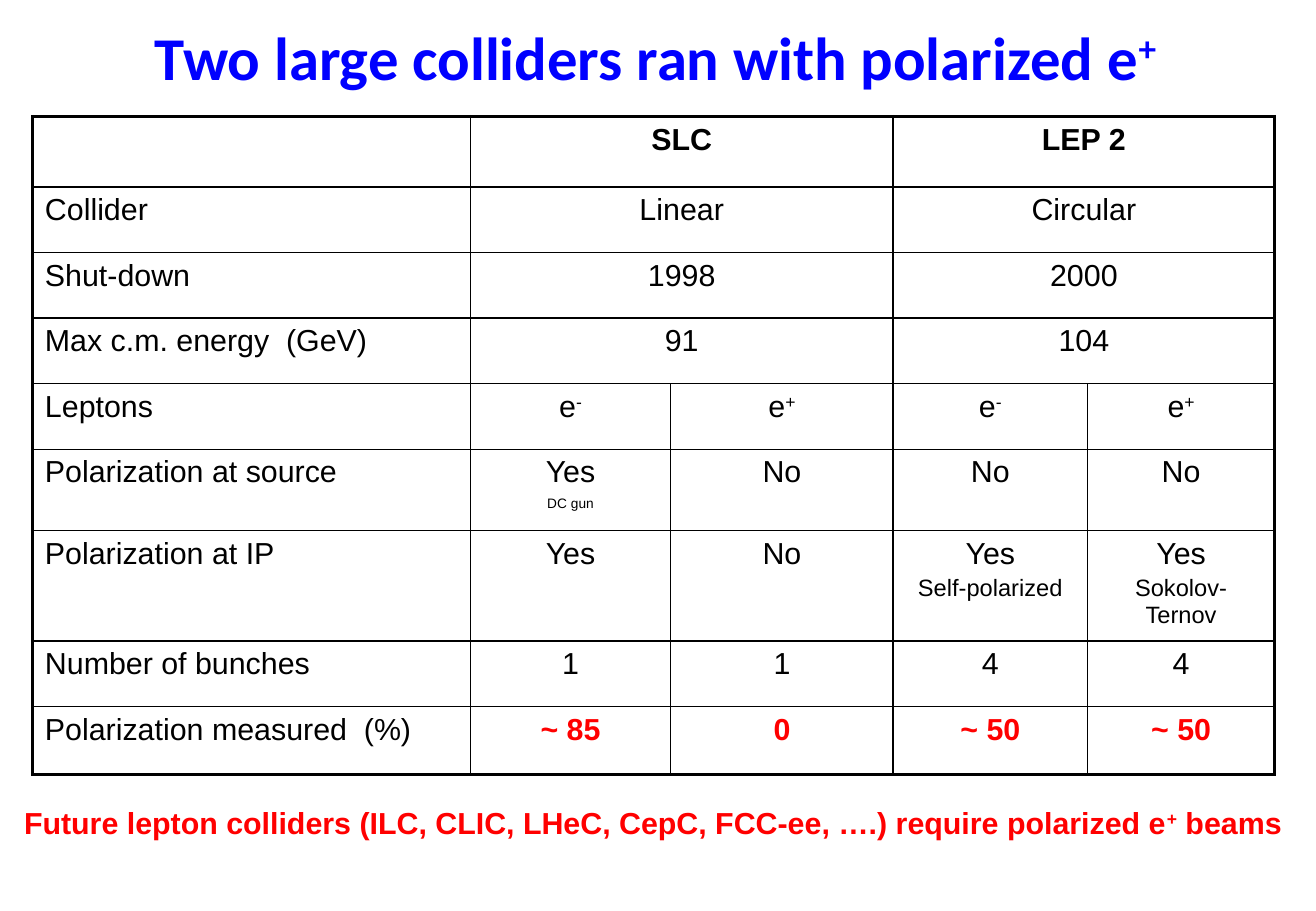
from pptx import Presentation
from pptx import util as u
from pptx.dml.color import RGBColor
from pptx.enum import text
from pptx.oxml import parse_xml
from pptx.oxml.ns import nsdecls

SLIDE_WIDTH, SLIDE_HEIGHT = 10.83, 7.5
BLACK, BLUE, RED = "000000", "0000FF", "FF0000"
OUTER_LINE, INNER_LINE = 2.25, 1
COLUMN_WIDTHS = [3.6, 1.65, 1.83, 1.6, 1.54]
ROW_HEIGHTS = [0.58, 0.54, 0.54, 0.54, 0.54, 0.67, 0.91, 0.54, 0.56]

# Carets enclose superscripts, a line break starts a small second line,
# and None continues the cell to its left.
COLLIDER_ROWS = [
    ["", "SLC", None, "LEP 2", None],
    ["Collider", "Linear", None, "Circular", None],
    ["Shut-down", "1998", None, "2000", None],
    ["Max c.m. energy  (GeV)", "91", None, "104", None],
    ["Leptons", "e^-", "e^+", "e^-", "e^+"],
    ["Polarization at source", "Yes\n^DC gun", "No", "No", "No"],
    ["Polarization at IP", "Yes", "No", "Yes\nSelf-polarized", "Yes\nSokolov-Ternov"],
    ["Number of bunches", "1", "1", "4", "4"],
    ["Polarization measured  (%)", "~ 85", "0", "~ 50", "~ 50"],
]


def color(hex_value):
    return RGBColor.from_string(hex_value)


def place(shape, box):
    shape.left, shape.top, shape.width, shape.height = map(u.Inches, box)


def write(paragraph, content, size, font="Arial", hex_value=BLACK, bold=False, centered=True):
    """Fill a paragraph; the parts between carets are raised."""
    paragraph.alignment = text.PP_ALIGN.CENTER if centered else text.PP_ALIGN.LEFT
    paragraph.font.name = font
    paragraph.font.size = u.Pt(size)
    paragraph.font.bold = bold
    paragraph.font.color.rgb = color(hex_value)
    for index, part in enumerate(content.split("^")):
        if part:
            run = paragraph.add_run()
            run.text = part
            if index % 2:
                run._r.get_or_add_rPr().set("baseline", "30000")


def set_borders(cell, widths):
    properties = cell._tc.get_or_add_tcPr()
    for position, (side, width) in enumerate(widths.items()):
        properties.insert(position, parse_xml(
            f'<a:{side} {nsdecls("a")} w="{u.Pt(width)}"><a:solidFill>'
            f'<a:srgbClr val="{BLACK}"/></a:solidFill></a:{side}>'))


def add_title(slide, box):
    title = slide.shapes.title
    place(title, box)
    title.text_frame.vertical_anchor = text.MSO_ANCHOR.MIDDLE
    write(title.text_frame.paragraphs[0], "Two large colliders ran with polarized e^+",
          36, "Calibri", BLUE, True)


def fill_cell(cell, content, row, column):
    last_row, last_column = len(ROW_HEIGHTS) - 1, len(COLUMN_WIDTHS) - 1
    is_value = column > 0
    is_result = is_value and row == last_row
    for index, line in enumerate(content.split("\n")):
        paragraph = cell.text_frame.add_paragraph() if index else cell.text_frame.paragraphs[0]
        if index:
            paragraph.space_before = u.Pt(2.8)
        write(paragraph, line, 14 if index else 18, hex_value=RED if is_result else BLACK,
              bold=row == 0 or is_result, centered=is_value)
    right_column = column + (cell.span_width if cell.is_merge_origin else 1) - 1
    on_edge = {"lnL": column == 0, "lnR": right_column == last_column,
               "lnT": row == 0, "lnB": row == last_row}
    set_borders(cell, {side: OUTER_LINE if edge else INNER_LINE
                       for side, edge in on_edge.items()})


def add_collider_table(slide, left, top):
    box = (left, top, sum(COLUMN_WIDTHS), sum(ROW_HEIGHTS))
    table = slide.shapes.add_table(len(ROW_HEIGHTS), len(COLUMN_WIDTHS),
                                   *map(u.Inches, box)).table
    table.first_row = table.horz_banding = False
    for column, width in zip(table.columns, COLUMN_WIDTHS):
        column.width = u.Inches(width)
    for row, height in zip(table.rows, ROW_HEIGHTS):
        row.height = u.Inches(height)

    # Join the lepton columns where one value covers a whole collider
    for row, values in enumerate(COLLIDER_ROWS):
        for column, content in enumerate(values):
            cell = table.cell(row, column)
            cell.fill.background()
            if content is None:
                table.cell(row, column - 1).merge(cell)

    for row, values in enumerate(COLLIDER_ROWS):
        for column, content in enumerate(values):
            if content is not None:
                fill_cell(table.cell(row, column), content, row, column)


def add_conclusion(slide, box):
    frame = slide.shapes.add_textbox(*map(u.Inches, box)).text_frame
    frame.word_wrap = True
    write(frame.paragraphs[0],
          "Future lepton colliders (ILC, CLIC, LHeC, CepC, FCC-ee, ….) "
          "require polarized e^+^ beams", 18, hex_value=RED, bold=True, centered=False)


def main():
    presentation = Presentation()
    presentation.slide_width = u.Inches(SLIDE_WIDTH)
    presentation.slide_height = u.Inches(SLIDE_HEIGHT)
    slide = presentation.slides.add_slide(presentation.slide_layouts[5])
    add_title(slide, (0.58, 0.1, 9.63, 0.72))
    add_collider_table(slide, 0.27, 0.96)
    add_conclusion(slide, (0.1, 6.57, SLIDE_WIDTH - 0.1, 0.4))
    presentation.save("out.pptx")


if __name__ == "__main__":
    main()
